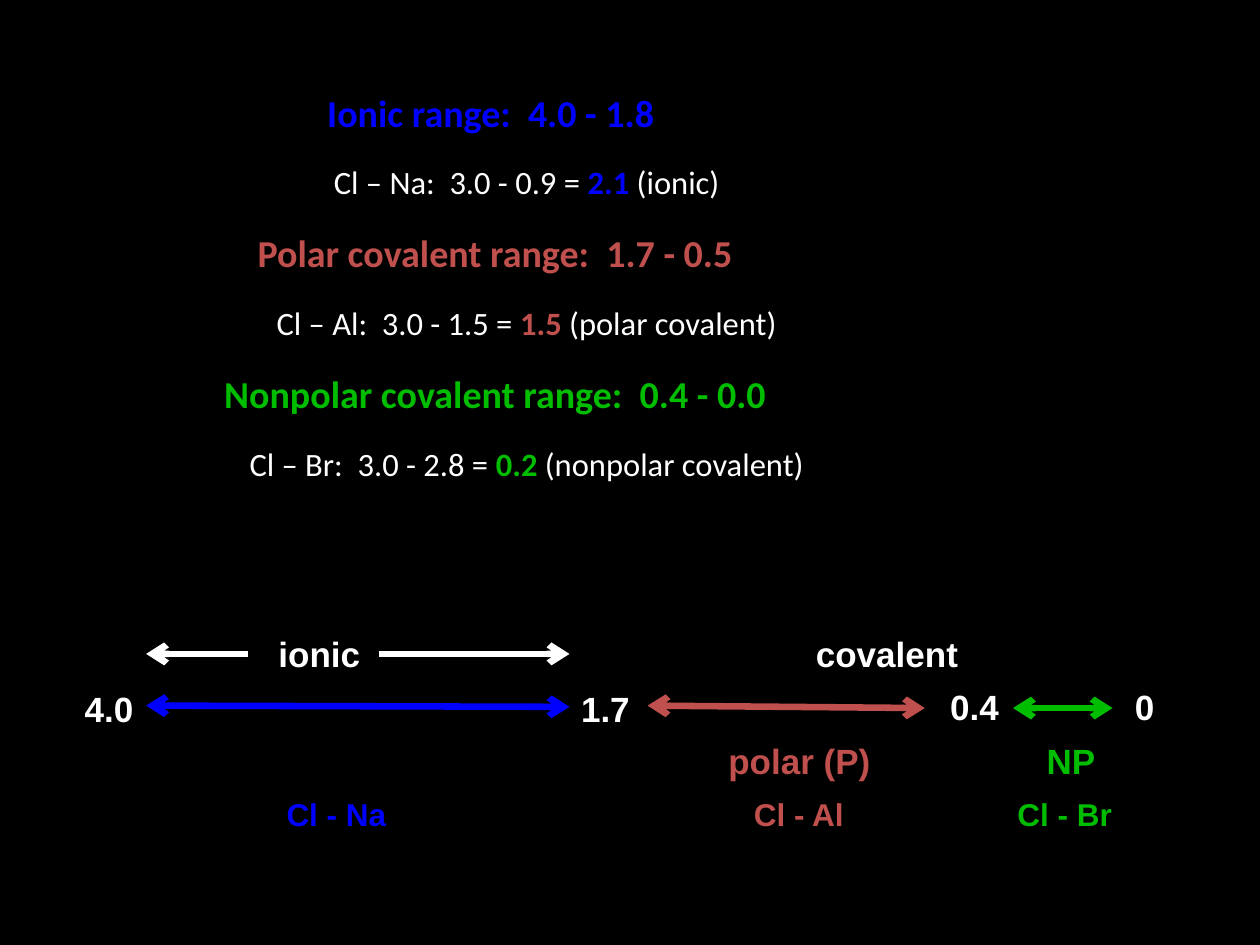
from lxml import etree
from pptx import Presentation
from pptx.dml.color import RGBColor
from pptx.enum.shapes import MSO_CONNECTOR
from pptx.enum.text import MSO_AUTO_SIZE, PP_ALIGN
from pptx.oxml.ns import qn
from pptx.util import Inches, Pt

STRAIGHT = MSO_CONNECTOR.STRAIGHT
CENTER = PP_ALIGN.CENTER
GROW = MSO_AUTO_SIZE.SHAPE_TO_FIT_TEXT

COLORS = {"background": "000000", "plain": "FFFFFF", "ionic": "0000FF",
          "polar": "C0504D", "nonpolar": "00BD00"}

RANGES = [
    ("ionic", "Ionic range:  4.0 - 1.8 ", ("Cl – Na:  3.0 - 0.9 = ", "2.1 ", "(ionic)")),
    ("polar", "Polar covalent range:  1.7 - 0.5",
     ("Cl – Al:  3.0 - 1.5 = ", "1.5", " (polar covalent)")),
    ("nonpolar", "Nonpolar covalent range:  0.4 - 0.0",
     ("Cl – Br:  3.0 - 2.8 = ", "0.2", " (nonpolar covalent)")),
]
HEADING = {"size": 21.7, "margin": 0.38, "hanging": 0.38}
EXAMPLE = {"size": 18.6, "margin": 0.81, "hanging": 0.31}

BOND_Y, SCALE_Y, KIND_Y, PAIR_Y = 4.97, 5.4, 5.82, 6.26
LABELS = [
    ("ionic", 1.97, BOND_Y, 1.13, 20, "plain"),
    ("covalent", 6.34, BOND_Y, 1.4, 20, "plain"),
    ("4.0", 0.3, SCALE_Y + 0.01, 1.13, 20, "plain"),
    ("1.7", 4.24, SCALE_Y + 0.01, 1.13, 20, "plain"),
    ("0.4", 7.16, SCALE_Y - 0.01, 1.15, 20, "plain"),
    ("0", 8.83, SCALE_Y - 0.01, 0.51, 20, "plain"),
    ("polar (P)", 5.53, KIND_Y, 1.63, 20, "polar"),
    ("NP", 8.08, KIND_Y, 0.84, 20, "nonpolar"),
    ("Cl - Na", 1.97, PAIR_Y, 1.4, 18, "ionic"),
    ("Cl - Al", 5.64, PAIR_Y, 1.4, 18, "polar"),
    ("Cl - Br", 7.75, PAIR_Y, 1.4, 18, "nonpolar"),
]

ARROWS = [
    ((3.01, 5.19), (4.52, 5.19), "plain", ("tailEnd",)),
    ((1.97, 5.19), (1.16, 5.19), "plain", ("tailEnd",)),
    ((1.16, 5.6), (4.52, 5.61), "ionic", ("headEnd", "tailEnd")),
    ((5.14, 5.6), (7.34, 5.62), "polar", ("headEnd", "tailEnd")),
    ((8.04, 5.62), (8.83, 5.62), "nonpolar", ("headEnd", "tailEnd")),
]


def rgb(role):
    return RGBColor.from_string(COLORS[role])


def write(paragraph, text, *, size, color, font, bold=True):
    paragraph.alignment = CENTER
    run = paragraph.add_run()
    run.text = text
    run.font.name = font
    run.font.size = Pt(size)
    run.font.bold = bold
    run.font.color.rgb = rgb(color)


def add_frame(slide, left, top, width, height):
    frame = slide.shapes.add_textbox(
        Inches(left), Inches(top), Inches(width), Inches(height)).text_frame
    frame.word_wrap = True
    return frame


def add_line(frame, first, pieces, layout):
    paragraph = frame.paragraphs[0] if first else frame.add_paragraph()
    paragraph.space_before = Pt(round(layout["size"] * 0.2, 1))
    paragraph.space_after = Pt(12)
    properties = paragraph._p.get_or_add_pPr()
    properties.set("marL", str(Inches(layout["margin"])))
    properties.set("indent", str(-Inches(layout["hanging"])))
    for text, color in pieces:
        write(paragraph, text, size=layout["size"], color=color,
              font="Calibri", bold=color != "plain")


def add_arrow(slide, start, end, color, heads):
    arrow = slide.shapes.add_connector(
        STRAIGHT, *(Inches(value) for value in start + end))
    arrow.line.color.rgb = rgb(color)
    arrow.line.width = Pt(3.75)
    outline = arrow.line._get_or_add_ln()
    for head in heads:
        etree.SubElement(outline, qn(f"a:{head}"), type="arrow")
    etree.SubElement(arrow._element.spPr, qn("a:effectLst"))


def main():
    deck = Presentation()
    deck.slide_width, deck.slide_height = Inches(10), Inches(7.5)
    slide = deck.slides.add_slide(deck.slide_layouts[6])
    slide.background.fill.solid()
    slide.background.fill.fore_color.rgb = rgb("background")

    ranges = add_frame(slide, 0, 0.66, 7.86, 3.09)
    for index, (bond, heading, (sum_text, result, kind)) in enumerate(RANGES):
        add_line(ranges, index == 0, [(heading, bond)], HEADING)
        add_line(ranges, False,
                 [(sum_text, "plain"), (result, bond), (kind, "plain")], EXAMPLE)

    for arrow in ARROWS:
        add_arrow(slide, *arrow)
    for text, left, top, width, size, color in LABELS:
        label = add_frame(slide, left, top, width, 0.44 if size == 20 else 0.4)
        label.auto_size = GROW
        write(label.paragraphs[0], text, size=size, color=color, font="Arial")

    deck.save("out.pptx")


if __name__ == "__main__":
    main()
